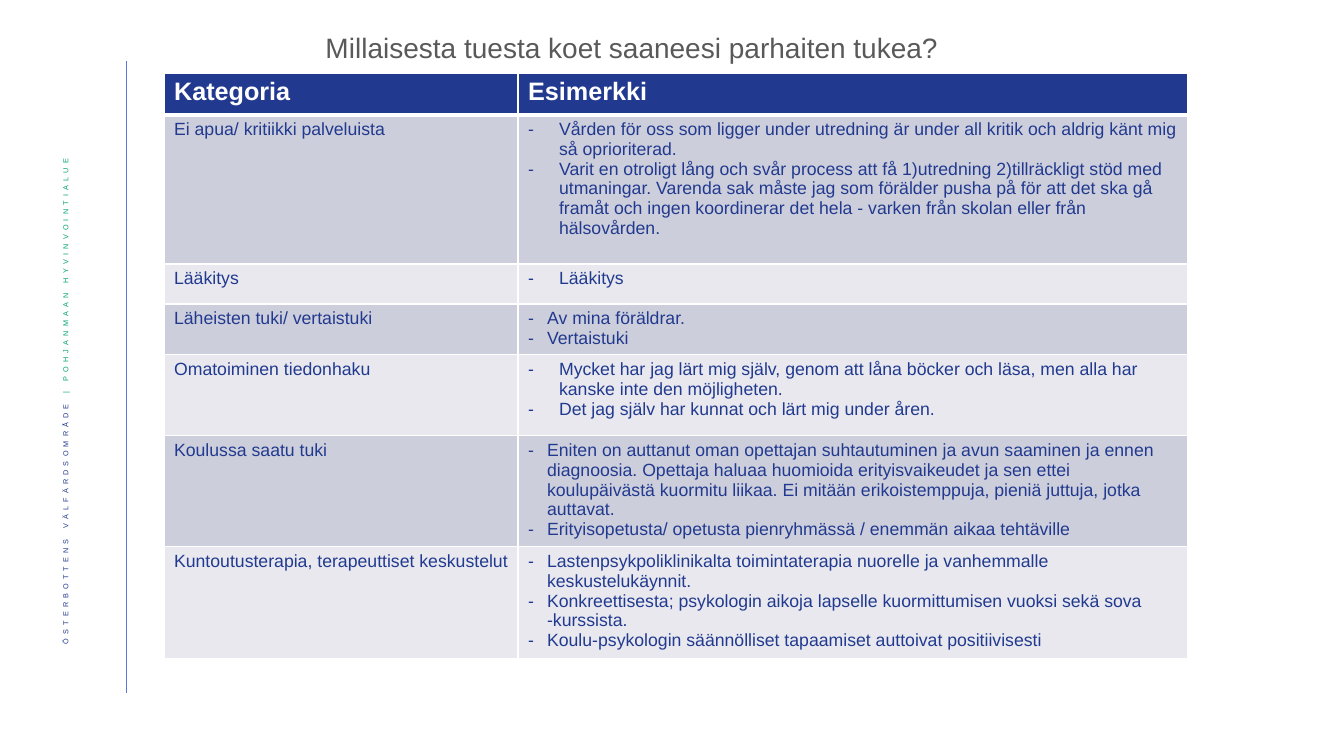
from lxml import etree
from pptx import Presentation
from pptx.dml.color import RGBColor
from pptx.enum.shapes import MSO_CONNECTOR
from pptx.enum.text import MSO_ANCHOR, PP_ALIGN
from pptx.oxml.ns import qn
from pptx.util import Pt

TITLE = "Millaisesta tuesta koet saaneesi parhaiten tukea?"
HEADINGS = ("Kategoria", "Esimerkki")
WIDE, NARROW = 31, 19
CATEGORIES = [
    ("Ei apua/ kritiikki palveluista", 149, WIDE, [
        "Vården för oss som ligger under utredning är under all kritik och aldrig känt mig så oprioriterad.",
        "Varit en otroligt lång och svår process att få 1)utredning 2)tillräckligt stöd med utmaningar. "
        "Varenda sak måste jag som förälder pusha på för att det ska gå framåt och ingen koordinerar "
        "det hela - varken från skolan eller från hälsovården."]),
    ("Lääkitys", 40, WIDE, ["Lääkitys"]),
    ("Läheisten tuki/ vertaistuki", 51, NARROW, ["Av mina föräldrar.", "Vertaistuki"]),
    ("Omatoiminen tiedonhaku", 81, WIDE, [
        "Mycket har jag lärt mig själv, genom att låna böcker och läsa, men alla har kanske inte den möjligheten.",
        "Det jag själv har kunnat och lärt mig under åren."]),
    ("Koulussa saatu tuki", 111, NARROW, [
        "Eniten on auttanut oman opettajan suhtautuminen ja avun saaminen ja ennen diagnoosia. "
        "Opettaja haluaa huomioida erityisvaikeudet ja sen ettei koulupäivästä kuormitu liikaa. "
        "Ei mitään erikoistemppuja, pieniä juttuja, jotka auttavat.",
        "Erityisopetusta/ opetusta pienryhmässä / enemmän aikaa tehtäville"]),
    ("Kuntoutusterapia, terapeuttiset keskustelut", 112, NARROW, [
        "Lastenpsykpoliklinikalta toimintaterapia nuorelle ja vanhemmalle keskustelukäynnit.",
        "Konkreettisesta; psykologin aikoja lapselle kuormittumisen vuoksi sekä sova -kurssista.",
        "Koulu-psykologin säännölliset tapaamiset auttoivat positiivisesti"]),
]
REGION_NAMES = [("ÖSTERBOTTENS VÄLFÄRDSOMRÅDE ", "navy"), ("| POHJANMAAN HYVINVOINTIALUE ", "green")]

COLORS = {"navy": "213A8F", "green": "00A174", "rule": "5C79D9", "title": "595959",
          "white": "FFFFFF", "dark_band": "CDCEDB", "light_band": "E8E8EE"}
FONT = "Arial"
HEADING_PT, BODY_PT = 18, 12.6
HEADING_HEIGHT = 42
COLUMN_WIDTHS = (354, 670)
TABLE_LEFT, TABLE_TOP = 164, 73


def px(length):
    return round(length * 914400 / 100.8)


def rgb(name):
    return RGBColor.from_string(COLORS[name])


def add_run(paragraph, text, size, color, bold=False):
    run = paragraph.add_run()
    run.text = text
    run.font.name = FONT
    run.font.size = Pt(size)
    run.font.bold = bold
    run.font.color.rgb = rgb(color)
    return run


def add_dash(paragraph, indent):
    properties = paragraph._p.get_or_add_pPr()
    properties.set("marL", str(px(indent)))
    properties.set("indent", str(-px(indent)))
    etree.SubElement(properties, qn("a:buFont"), typeface=FONT)
    etree.SubElement(properties, qn("a:buChar"), char="-")


def style_cell(cell, fill, bottom_pt=1, top_pt=1):
    properties = cell._tc.get_or_add_tcPr()
    for side, width in (("L", 1), ("R", 1), ("T", top_pt), ("B", bottom_pt)):
        border = etree.SubElement(properties, qn(f"a:ln{side}"), w=str(Pt(width)))
        paint = etree.SubElement(border, qn("a:solidFill"))
        etree.SubElement(paint, qn("a:srgbClr"), val=COLORS["white"])
    cell.fill.solid()
    cell.fill.fore_color.rgb = rgb(fill)


def add_title(slide):
    title = slide.shapes.title
    title.left, title.top, title.width, title.height = px(274), px(25), px(716), px(75)
    frame = title.text_frame
    frame.word_wrap = True
    frame.vertical_anchor = MSO_ANCHOR.TOP
    paragraph = frame.paragraphs[0]
    paragraph.alignment = PP_ALIGN.CENTER
    paragraph.line_spacing = 1.0
    add_run(paragraph, TITLE, 20, "title")


def add_side_band(slide):
    rule = slide.shapes.add_connector(MSO_CONNECTOR.STRAIGHT, px(126), px(61), px(126), px(693))
    rule.line.color.rgb = rgb("rule")
    rule.line.width = Pt(0.5)
    etree.SubElement(rule._element.spPr, qn("a:effectLst"))

    region = slide.shapes.add_textbox(px(42), px(143), px(52), px(578))
    frame = region.text_frame
    frame.word_wrap = True
    frame.vertical_anchor = MSO_ANCHOR.MIDDLE
    frame._txBody.bodyPr.set("vert", "vert270")
    paragraph = frame.paragraphs[0]
    paragraph.alignment = PP_ALIGN.RIGHT
    paragraph.line_spacing = 0.9
    for name, color in REGION_NAMES:
        properties = add_run(paragraph, name, 9, color)._r.get_or_add_rPr()
        properties.set("baseline", "30000")
        properties.set("spc", "300")


def add_categories(slide):
    heights = [HEADING_HEIGHT] + [height for _, height, _, _ in CATEGORIES]
    table = slide.shapes.add_table(
        len(heights), len(HEADINGS), px(TABLE_LEFT), px(TABLE_TOP),
        px(sum(COLUMN_WIDTHS)), px(sum(heights))).table
    for column, width in zip(table.columns, COLUMN_WIDTHS):
        column.width = px(width)
    for row, height in zip(table.rows, heights):
        row.height = px(height)

    for index, heading in enumerate(HEADINGS):
        cell = table.cell(0, index)
        style_cell(cell, "navy", bottom_pt=3)
        add_run(cell.text_frame.paragraphs[0], heading, HEADING_PT, "white", True)

    for index, (category, _, indent, examples) in enumerate(CATEGORIES, 1):
        band = "dark_band" if index % 2 else "light_band"
        category_cell, example_cell = table.cell(index, 0), table.cell(index, 1)
        for cell in (category_cell, example_cell):
            style_cell(cell, band, top_pt=3 if index == 1 else 1)
        add_run(category_cell.text_frame.paragraphs[0], category, BODY_PT, "navy")
        frame = example_cell.text_frame
        for position, example in enumerate(examples):
            paragraph = frame.add_paragraph() if position else frame.paragraphs[0]
            add_dash(paragraph, indent)
            add_run(paragraph, example, BODY_PT, "navy")


def main():
    deck = Presentation()
    deck.slide_width, deck.slide_height = px(1344), px(756)
    slide = deck.slides.add_slide(deck.slide_layouts[5])
    add_side_band(slide)
    add_categories(slide)
    add_title(slide)
    deck.save("out.pptx")


if __name__ == "__main__":
    main()
